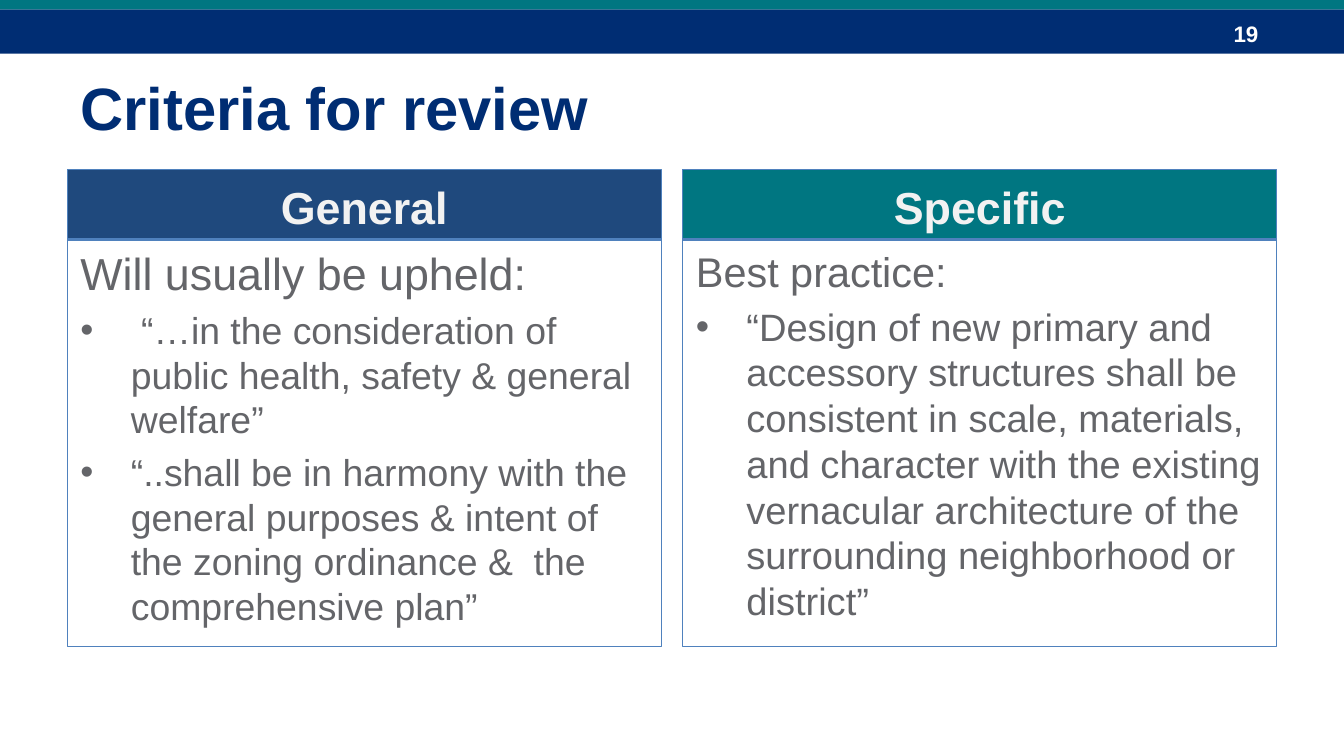
import pptx
import pptx.util
import pptx.dml.color
import pptx.enum.shapes
import pptx.enum.text
import pptx.oxml.ns
import lxml.etree

Inches = pptx.util.Inches
Pt = pptx.util.Pt
RGBColor = pptx.dml.color.RGBColor
ALIGN = pptx.enum.text.PP_ALIGN
ANCHOR = pptx.enum.text.MSO_ANCHOR

NAVY = RGBColor(0x00, 0x2D, 0x73)
TEAL = RGBColor(0x00, 0x76, 0x81)
BLUE = RGBColor(0x1F, 0x49, 0x7D)
BORDER = RGBColor(0x4F, 0x81, 0xBD)
GRAY = RGBColor(0x64, 0x65, 0x69)
PALE = RGBColor(0xF2, 0xF2, 0xF2)
WHITE = RGBColor(0xFF, 0xFF, 0xFF)

COLUMNS = [
    ("General", BLUE, "Will usually be upheld:", 24, 20, [
        " “…in the consideration of public health, safety & general welfare”",
        "“..shall be in harmony with the general purposes & intent of the "
        "zoning ordinance &  the comprehensive plan”",
    ]),
    ("Specific", TEAL, "Best practice:", 22.2, 20.4, [
        "“Design of new primary and accessory structures shall be consistent "
        "in scale, materials, and character with the existing vernacular "
        "architecture of the surrounding neighborhood or district”",
    ]),
]


def add_box(slide, left, top, width, height, fill=None, border=None):
    box = slide.shapes.add_shape(
        pptx.enum.shapes.MSO_SHAPE.RECTANGLE,
        Inches(left), Inches(top), Inches(width), Inches(height))
    box.shadow.inherit = False
    if fill is None:
        box.fill.background()
    else:
        box.fill.solid()
        box.fill.fore_color.rgb = fill
    if border is None:
        box.line.fill.background()
    else:
        box.line.color.rgb = border
        box.line.width = Pt(0.75)
    return box


def write(paragraph, text, size, color, bold=False, align=ALIGN.LEFT):
    paragraph.text = text
    paragraph.alignment = align
    font = paragraph.font
    font.name = "Arial"
    font.size = Pt(size)
    font.bold = bold
    font.color.rgb = color


def add_bullet(paragraph):
    indent = Inches(3 / 8)
    properties = paragraph._p.get_or_add_pPr()
    properties.set("marL", str(indent))
    properties.set("indent", str(-indent))
    qn = pptx.oxml.ns.qn
    lxml.etree.SubElement(properties, qn("a:buFont")).set("typeface", "Arial")
    lxml.etree.SubElement(properties, qn("a:buChar")).set("char", "•")


def add_label(slide, left, top, width, height, text, size, color):
    label = slide.shapes.add_textbox(
        Inches(left), Inches(top), Inches(width), Inches(height))
    frame = label.text_frame
    frame.word_wrap = True
    write(frame.paragraphs[0], text, size, color, bold=True)


def add_banner(slide, left, top, width):
    add_box(slide, left, top + 0.07, width, 0.33, NAVY)
    add_label(slide, left + width - 0.92, top + 0.1, 0.75, 0.3, "19", 12, WHITE)
    add_box(slide, left, top, width, 0.07, TEAL)


def add_title(slide, left, top, width, height):
    add_label(slide, left, top, width, height, "Criteria for review", 32, NAVY)


def add_column(slide, left, top, width, height, column):
    heading, color, lead, lead_size, quote_size, quotes = column
    body_offset = 0.52

    header = add_box(slide, left, top, width, body_offset + 0.01, color, BORDER)
    header.text_frame.vertical_anchor = ANCHOR.BOTTOM
    write(header.text_frame.paragraphs[0], heading, 24, PALE, True, ALIGN.CENTER)

    body = add_box(slide, left, top + body_offset, width,
                   height - body_offset, border=BORDER)
    frame = body.text_frame
    frame.word_wrap = True
    frame.vertical_anchor = ANCHOR.TOP
    write(frame.paragraphs[0], lead, lead_size, GRAY)
    for quote in quotes:
        paragraph = frame.add_paragraph()
        add_bullet(paragraph)
        write(paragraph, quote, quote_size, GRAY)
        paragraph.space_before = Pt(quote_size * 0.2)


def main():
    presentation = pptx.Presentation()
    presentation.slide_width = Inches(10)
    presentation.slide_height = Inches(10 * 9 / 16)
    slide = presentation.slides.add_slide(presentation.slide_layouts[6])

    add_banner(slide, 0, 0, 10)
    add_title(slide, 0.5, 0.48, 9.17, 0.64)
    width, gap = 4.42, 0.16
    for index, column in enumerate(COLUMNS):
        add_column(slide, 0.5 + index * (width + gap), 1.26, width, 3.55, column)

    presentation.save("out.pptx")


if __name__ == "__main__":
    main()
